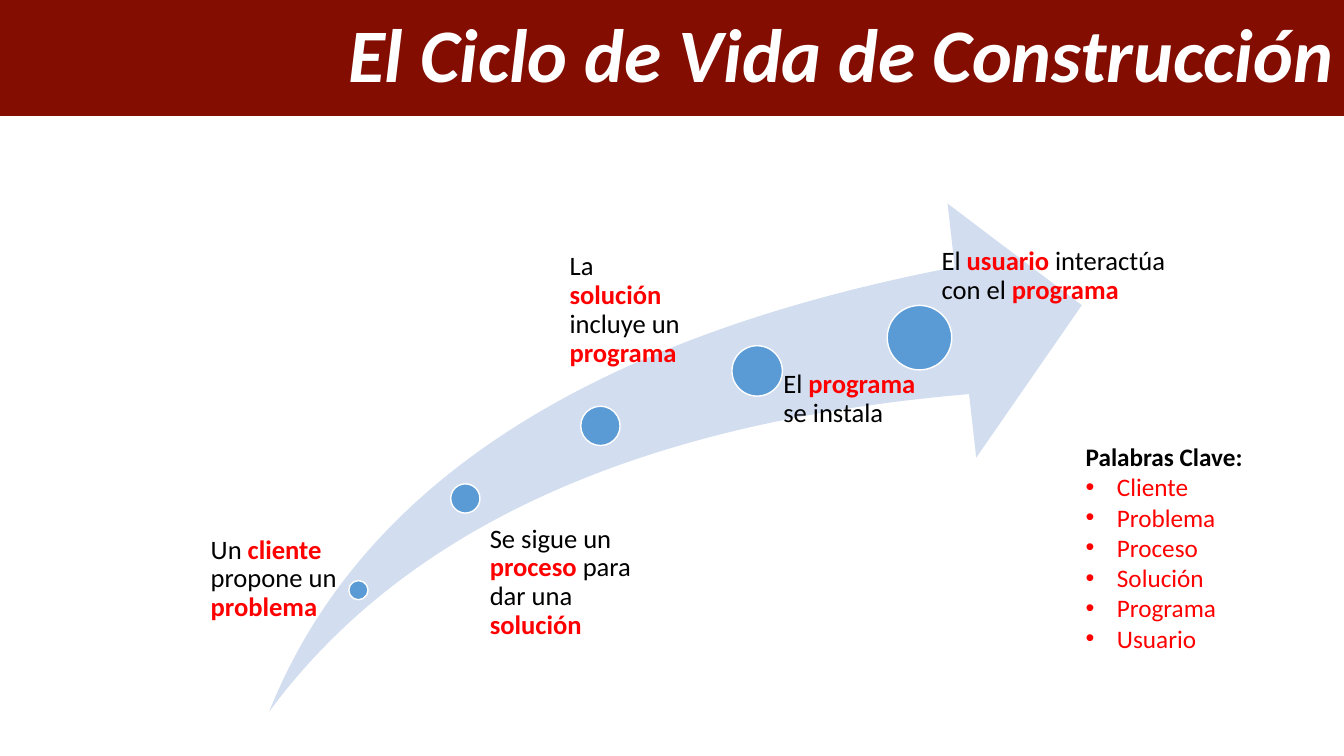
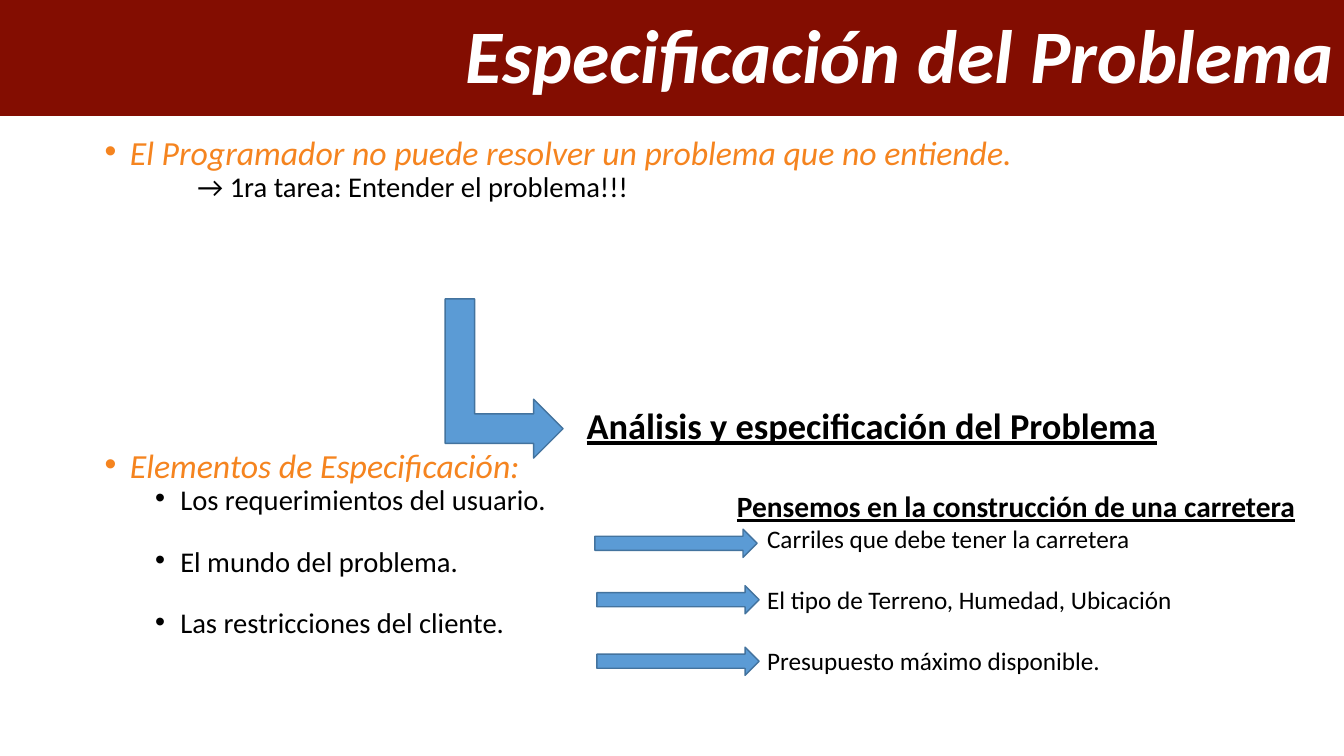
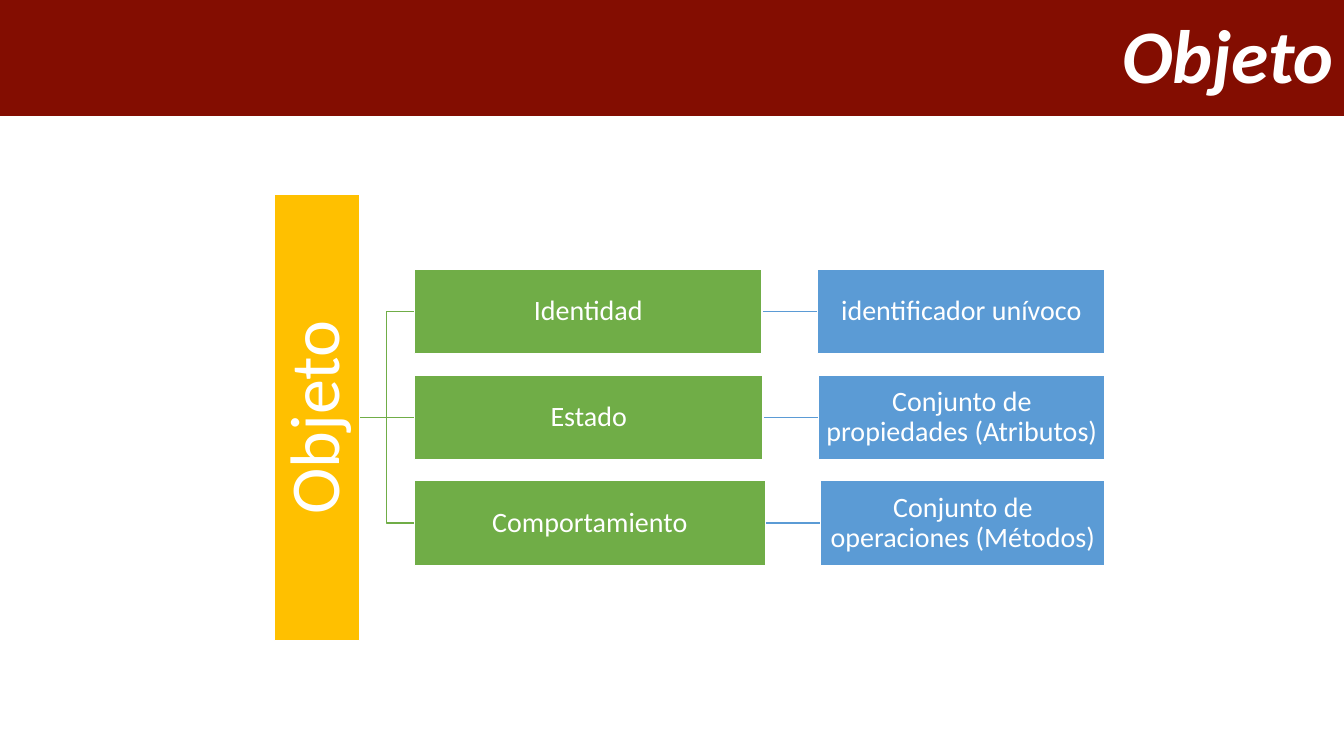
"""Builds three slides on the software construction life cycle and objects."""
from lxml.etree import SubElement
from pptx import Presentation
from pptx.dml.color import RGBColor
from pptx.enum.shapes import MSO_CONNECTOR, MSO_SHAPE
from pptx.enum.text import MSO_ANCHOR, MSO_AUTO_SIZE, PP_ALIGN
from pptx.oxml.ns import qn
from pptx.util import Pt

PX = 9144
WIDTH, HEIGHT = 1333, 750
FONT = "Calibri"

MAROON = RGBColor(0x83, 0x0D, 0x01)
WHITE = RGBColor(0xFF, 0xFF, 0xFF)
BLACK = RGBColor(0x00, 0x00, 0x00)
RED = RGBColor(0xFF, 0x00, 0x00)
ORANGE = RGBColor(0xF5, 0x84, 0x1F)
BLUE = RGBColor(0x5B, 0x9B, 0xD5)
DARK_BLUE = RGBColor(0x43, 0x73, 0x9E)
PALE_BLUE = RGBColor(0xD2, 0xDE, 0xEF)
GREEN = RGBColor(0x70, 0xAD, 0x47)
GOLD = RGBColor(0xFF, 0xC0, 0x00)

RECTANGLE, OVAL = MSO_SHAPE.RECTANGLE, MSO_SHAPE.OVAL
SWOOSH, BENT_ARROW = MSO_SHAPE.SWOOSH_ARROW, MSO_SHAPE.BENT_UP_ARROW
RIGHT_ARROW = MSO_SHAPE.RIGHT_ARROW
STRAIGHT, ELBOW = MSO_CONNECTOR.STRAIGHT, MSO_CONNECTOR.ELBOW
MIDDLE, NO_FIT = MSO_ANCHOR.MIDDLE, MSO_AUTO_SIZE.NONE
CENTER, RIGHT = PP_ALIGN.CENTER, PP_ALIGN.RIGHT

TITLE_FONT = {"size": Pt(54), "bold": True, "italic": True}
STEP_FONT = {"size": Pt(19)}
LIST_FONT = {"size": Pt(18)}
TOPIC_FONT = {"size": Pt(24.1), "italic": True}
DETAIL_FONT = {"size": Pt(20.4)}


def draw(page, kind, bounds, fill=None, line=None):
    """Add a shape, or a wrapping text box when kind is None."""
    bounds = [value * PX for value in bounds]
    if kind is None:
        box = page.shapes.add_textbox(*bounds)
        box.text_frame.word_wrap = True
        return box
    shape = page.shapes.add_shape(kind, *bounds)
    shape.shadow.inherit = False
    shape.fill.solid()
    shape.fill.fore_color.rgb = fill
    if line is None:
        shape.line.fill.background()
    else:
        shape.line.color.rgb = line
        shape.line.width = Pt(1)
    return shape


def write(frame, text, font, color=BLACK, layout=None, margin=0, bullet=0):
    """Write one paragraph; words between asterisks are red and bold."""
    first = frame.paragraphs[0]
    para = frame.add_paragraph() if first.runs else first
    if margin:
        properties = para._p.get_or_add_pPr()
        properties.set("marL", str(margin * PX))
        properties.set("indent", str(-bullet * PX))
        if bullet:
            SubElement(properties, qn("a:buFont"), typeface="Arial")
            SubElement(properties, qn("a:buChar"), char="•")
    for name, value in (layout or {}).items():
        setattr(para, name, value)
    for index, part in enumerate(text.split("*")):
        if not part:
            continue
        span = para.add_run()
        span.text = part
        keyword = index % 2 == 1
        values = {"name": FONT, **font}
        if keyword:
            values["bold"] = True
        for name, value in values.items():
            setattr(span.font, name, value)
        span.font.color.rgb = RED if keyword else color


deck = Presentation()
deck.slide_width, deck.slide_height = WIDTH * PX, HEIGHT * PX
title_only = deck.slide_layouts[5]

TITLES = [
    ("El Ciclo de Vida de Construcción", (117, 0, 1216, 115)),
    ("Especificación del Problema", (219, 1, 1114, 116)),
    ("Objeto", (219, 1, 1114, 116)),
]
pages = []
for text, bounds in TITLES:
    page = deck.slides.add_slide(title_only)
    title = page.shapes.title
    title.left, title.top, title.width, title.height = [value * PX for value in bounds]
    title.text_frame.auto_size = NO_FIT
    title.text_frame.vertical_anchor = MIDDLE
    write(title.text_frame, text, TITLE_FONT, WHITE,
          {"alignment": RIGHT, "line_spacing": 0.9})
    pages.append(page)
cycle, problem, concept = pages

BANDS = [
    ((0, 95, WIDTH, 19), MAROON),
    ((0, 0, WIDTH, 96), None),
    ((0, 105, 219, 7), MAROON),
]
for position, (bounds, line) in enumerate(BANDS, start=2):
    band = draw(cycle, RECTANGLE, bounds, MAROON, line)
    title_only.shapes.element.insert(position, band.element)

swoosh = draw(cycle, SWOOSH, (267, 202, 806, 504), PALE_BLUE)
swoosh.adjustments[0] = swoosh.adjustments[1] = 0.25

DOTS = [(346, 576, 19), (447, 480, 29), (576, 403, 39), (726, 343, 50), (880, 303, 64)]
for left, top, size in DOTS:
    draw(cycle, OVAL, (left, top, size, size), BLUE, WHITE)

STEPS = [
    ("Un *cliente *propone un *problema*", (175, 532, 161, 167), 34),
    ("Se sigue un *proceso *para dar una *solución*", (476, 521, 180, 120), 10),
    ("La *solución *incluye un *programa*", (550, 251, 134, 211), 15),
    ("El *programa *se instala", (751, 368, 161, 337), 26),
    ("El *usuario *interactúa con el *programa*", (914, 246, 263, 283), 20),
]
for text, bounds, inset in STEPS:
    frame = draw(cycle, None, bounds).text_frame
    frame.margin_left = inset * PX
    frame.margin_top = frame.margin_right = frame.margin_bottom = 0
    write(frame, text, STEP_FONT, layout={"line_spacing": 0.9})

frame = draw(cycle, None, (1067, 433, 177, 222)).text_frame
write(frame, "Palabras Clave:", {**LIST_FONT, "bold": True})
for keyword in ["Cliente", "Problema", "Proceso", "Solución", "Programa", "Usuario"]:
    write(frame, keyword, LIST_FONT, RED, margin=31, bullet=31)

TOPICS = [
    ("El Programador no puede resolver un problema que no entiende.",
     TOPIC_FONT, ORANGE, 0, 75, 25),
    ("→ 1ra tarea: Entender el problema!!!", DETAIL_FONT, BLACK, 5, 142, 0),
    ("Elementos de Especificación:", TOPIC_FONT, ORANGE, 181, 75, 25),
    ("Los requerimientos del usuario.", DETAIL_FONT, BLACK, 5, 125, 25),
    ("El mundo del problema.", DETAIL_FONT, BLACK, 27, 125, 25),
    ("Las restricciones del cliente.", DETAIL_FONT, BLACK, 27, 125, 25),
]
frame = draw(problem, None, (44, 137, 1256, 538)).text_frame
for text, font, color, before, margin, bullet in TOPICS:
    write(frame, text, font, color,
          {"line_spacing": 0.7, "space_before": Pt(before)}, margin, bullet)

bent_arrow = draw(problem, BENT_ARROW, (421, 317, 158, 117), BLUE, DARK_BLUE)
bent_arrow.rotation = 90

HEADINGS = [
    ("Análisis y especificación del Problema", (572, 395, 592, 54), 26),
    ("Pensemos en la construcción de una carretera", (721, 479, 579, 45), 21),
]
for text, bounds, size in HEADINGS:
    frame = draw(problem, None, bounds).text_frame
    write(frame, text, {"size": Pt(size), "bold": True, "underline": True})

EXAMPLES = [
    ("Carriles que debe tener la carretera", 0, (590, 525)),
    ("El tipo de Terreno, Humedad, Ubicación", 22, (592, 581)),
    ("Presupuesto máximo disponible.", 22, (592, 642)),
]
frame = draw(problem, None, (751, 514, 427, 162)).text_frame
for text, before, corner in EXAMPLES:
    write(frame, text, LIST_FONT, layout={"space_before": Pt(before)})
    draw(problem, RIGHT_ARROW, (*corner, 161, 28), BLUE, DARK_BLUE)

BOX_HEIGHT, BOX_PITCH, BOX_TOP = 84, 105, 267
ASPECT_LEFT, GAP, RIGHT_EDGE = 411, 55, 1096
ROOT_RIGHT = ASPECT_LEFT - GAP
ROOT_MIDDLE = BOX_TOP + BOX_PITCH + BOX_HEIGHT // 2
ASPECTS = [
    ("Identidad", "identificador unívoco", 345),
    ("Estado", "Conjunto de propiedades (Atributos)", 346),
    ("Comportamiento", "Conjunto de operaciones (Métodos)", 348),
]
boxes = [("Objeto", (93, 372, 443, BOX_HEIGHT), GOLD, 50, 3, 270)]
links = []
for row, (aspect, detail, width) in enumerate(ASPECTS):
    top = BOX_TOP + row * BOX_PITCH
    middle = top + BOX_HEIGHT // 2
    aspect_right = ASPECT_LEFT + width
    detail_left = aspect_right + GAP
    boxes += [
        (aspect, (ASPECT_LEFT, top, width, BOX_HEIGHT), GREEN, 20, 1, 0),
        (detail, (detail_left, top, RIGHT_EDGE - detail_left, BOX_HEIGHT), BLUE, 20, 1, 0),
    ]
    links += [
        (STRAIGHT if middle == ROOT_MIDDLE else ELBOW,
         (ROOT_RIGHT, ROOT_MIDDLE, ASPECT_LEFT, middle), GREEN),
        (STRAIGHT, (aspect_right, middle, detail_left, middle), BLUE),
    ]

for kind, ends, color in links:
    link = concept.shapes.add_connector(kind, *[value * PX for value in ends])
    link.line.color.rgb = color
    link.line.width = Pt(1)
    SubElement(link.element.spPr, qn("a:effectLst"))

for text, bounds, fill, size, inset, rotation in boxes:
    box = draw(concept, RECTANGLE, bounds, fill, WHITE)
    box.rotation = rotation
    frame = box.text_frame
    frame.word_wrap = True
    frame.vertical_anchor = MIDDLE
    for side in ("left", "top", "right", "bottom"):
        setattr(frame, f"margin_{side}", inset * PX)
    write(frame, text, {"size": Pt(size)}, WHITE,
          {"alignment": CENTER, "line_spacing": 0.9})

deck.save("out.pptx")
